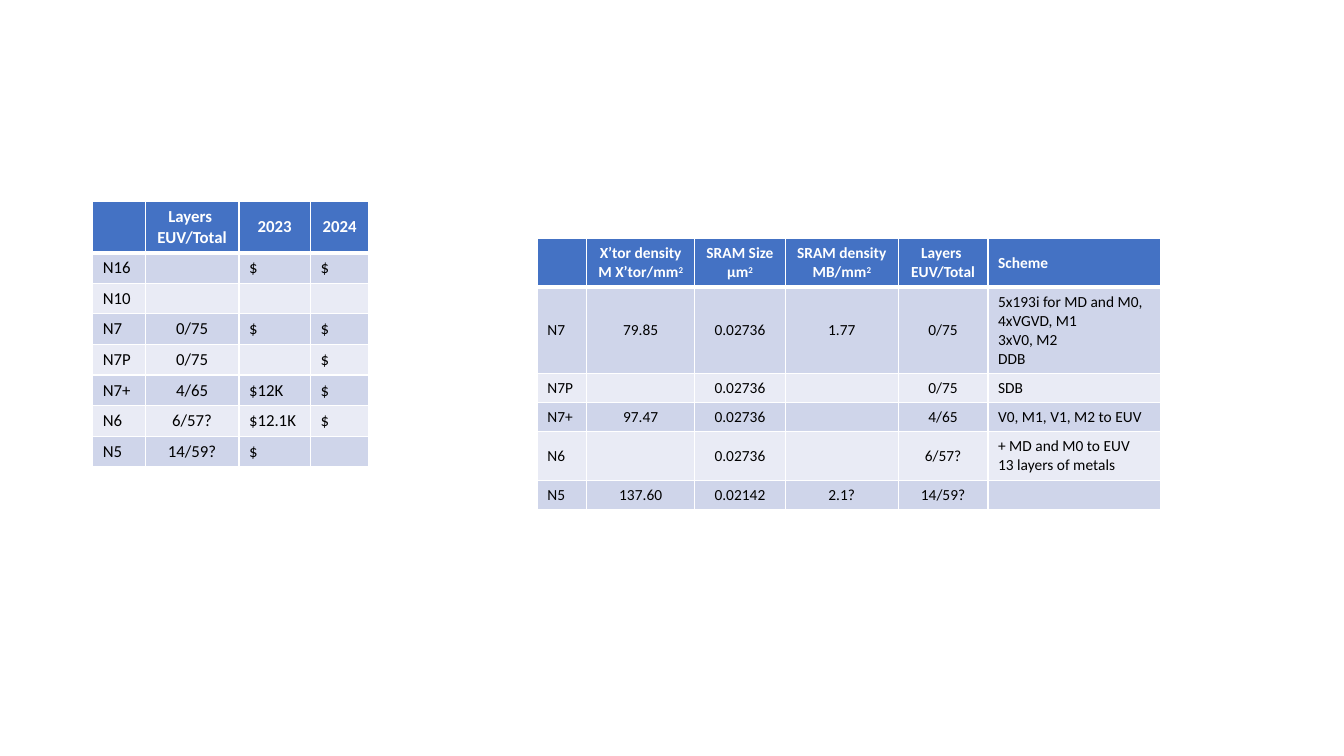
from lxml.etree import SubElement
from pptx import Presentation
from pptx.dml.color import RGBColor
from pptx.enum.text import MSO_ANCHOR, PP_ALIGN
from pptx.oxml.ns import qn
from pptx.util import Inches, Pt

BLUE = RGBColor(0x44, 0x72, 0xC4)
BAND = RGBColor(0xCF, 0xD5, 0xEA)
PALE = RGBColor(0xE9, 0xEB, 0xF5)
WHITE = RGBColor(0xFF, 0xFF, 0xFF)
BLACK = RGBColor(0, 0, 0)


def add_borders(cell, widths):
    tcPr = cell._tc.get_or_add_tcPr()
    for side, width in zip("LRTB", widths):
        ln = SubElement(tcPr, qn(f"a:ln{side}"), w=str(Pt(width)))
        SubElement(SubElement(ln, qn("a:solidFill")), qn("a:srgbClr"), val=str(WHITE))


def add_run(p, text, size, header):
    r = p.add_run()
    r.text = text
    r.font.name = "Calibri"
    r.font.size = Pt(size)
    r.font.bold = header
    r.font.color.rgb = WHITE if header else BLACK
    return r


prices = [
    ["", "Layers \nEUV/Total", "2023", "2024"],
    ["N16", "", "$", "$"],
    ["N10", "", "", ""],
    ["N7", "0/75", "$", "$"],
    ["N7P", "0/75", "", "$"],
    ["N7+", "4/65", "$12K", "$"],
    ["N6", "6/57?", "$12.1K", "$"],
    ["N5", "14/59?", "$", ""],
]
densities = [
    ["", "X’tor density\nM X’tor/mm²", "SRAM Size\nµm²", "SRAM density\nMB/mm²",
     "Layers \nEUV/Total", "Scheme"],
    ["N7", "79.85", "0.02736", "1.77", "0/75",
     "5x193i for MD and M0,\n4xVGVD, M1\n3xV0, M2\nDDB"],
    ["N7P", "", "0.02736", "", "0/75", "SDB"],
    ["N7+", "97.47", "0.02736", "", "4/65", "V0, M1, V1, M2 to EUV"],
    ["N6", "", "0.02736", "", "6/57?", "+ MD and M0 to EUV\n13 layers of metals"],
    ["N5", "137.60", "0.02142", "2.1?", "14/59?", ""],
]
tables = [
    (prices, 0.92, 2, [0.52, 0.93, 0.71, 0.58], [0.5] + [0.3] * 7, 12, {1}, {1, 2, 3}),
    (densities, 5.33, 2.37, [0.49, 1.07, 0.9, 1.12, 0.89, 1.71],
     [0.48, 0.85, 0.29, 0.29, 0.48, 0.29], 11, {1, 2, 3, 4}, {1, 2, 3, 4}),
]

prs = Presentation()
prs.slide_width = Inches(13.33)
prs.slide_height = Inches(7.5)
s = prs.slides.add_slide(prs.slide_layouts[6])

for rows, left, top, widths, heights, size, centred, centred_heads in tables:
    table = s.shapes.add_table(len(rows), len(widths), Inches(left), Inches(top),
                               Inches(sum(widths)), Inches(sum(heights))).table
    for column, width in zip(table.columns, widths):
        column.width = Inches(width)
    for i, (values, height) in enumerate(zip(rows, heights)):
        table.rows[i].height = Inches(height)
        header = i == 0
        for j, value in enumerate(values):
            cell = table.cell(i, j)
            cell.vertical_anchor = MSO_ANCHOR.MIDDLE
            add_borders(cell, (1, 1, 3 if i == 1 else 1, 3 if header else 1))
            cell.fill.solid()
            cell.fill.fore_color.rgb = BLUE if header else BAND if i % 2 else PALE
            tf = cell.text_frame
            for k, line in enumerate(value.split("\n")):
                p = tf.add_paragraph() if k else tf.paragraphs[0]
                if j in (centred_heads if header else centred):
                    p.alignment = PP_ALIGN.CENTER
                if not line:
                    SubElement(p._p, qn("a:endParaRPr"), sz=str(size * 100))
                    continue
                add_run(p, line.removesuffix("²"), size, header)
                if line.endswith("²"):
                    r = add_run(p, "2", size, header)
                    r._r.get_or_add_rPr().set("baseline", "30000")

prs.save("out.pptx")
